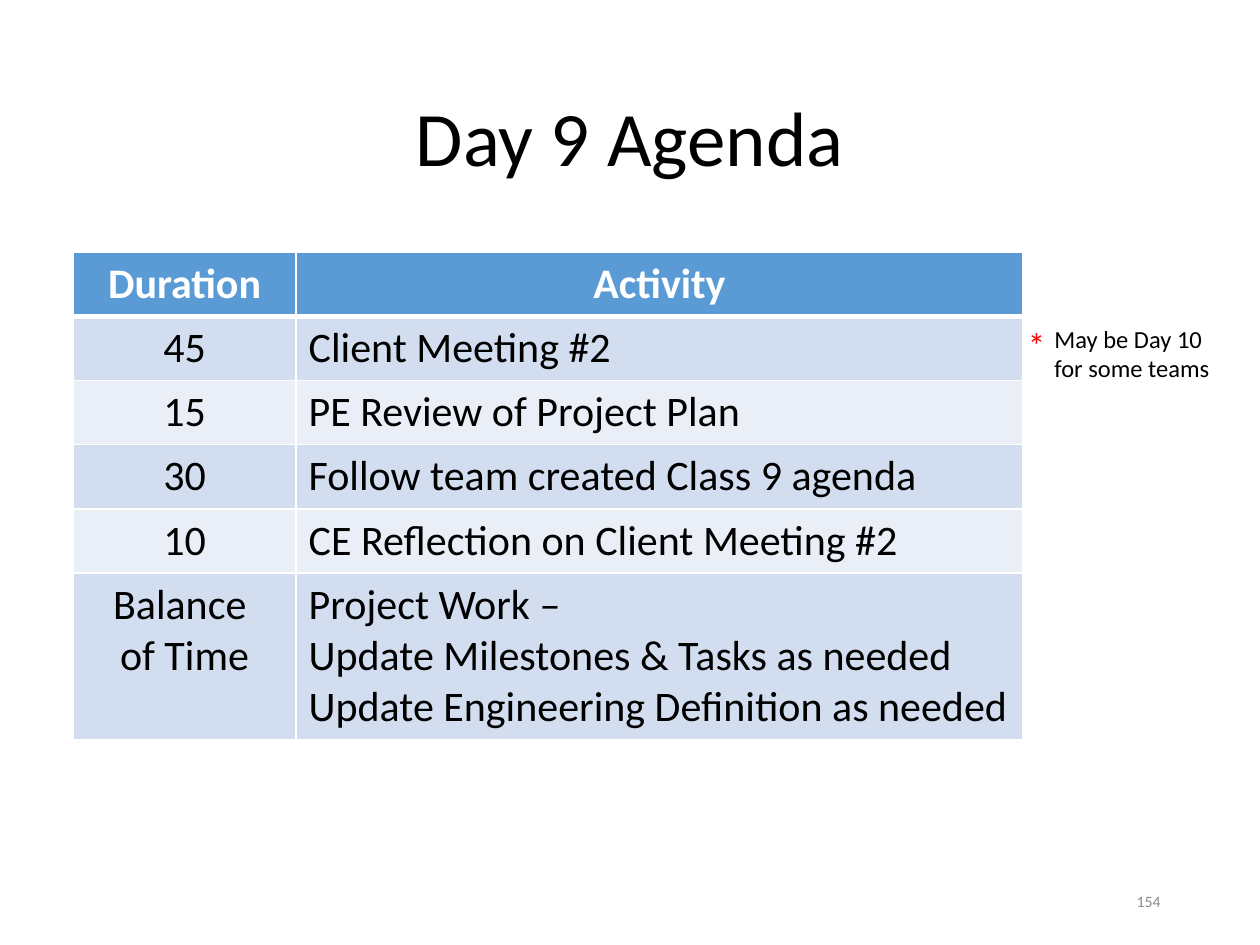
from lxml.etree import SubElement
from pptx import Presentation
from pptx.dml.color import RGBColor
from pptx.enum.text import MSO_ANCHOR, PP_ALIGN
from pptx.oxml.ns import qn
from pptx.util import Inches, Pt

BLACK = RGBColor(0x00, 0x00, 0x00)
WHITE = RGBColor(0xFF, 0xFF, 0xFF)
RED = RGBColor(0xFF, 0x00, 0x00)
GRAY = RGBColor(0x8C, 0x8C, 0x8C)
HEADER_BLUE = RGBColor(0x5B, 0x9B, 0xD5)
BANDS = (RGBColor(0xEA, 0xEF, 0xF7), RGBColor(0xD2, 0xDE, 0xEF))

AGENDA = [
    ("Duration", "Activity"),
    ("45", "Client Meeting #2"),
    ("15", "PE Review of Project Plan"),
    ("30", "Follow team created Class 9 agenda"),
    ("10", "CE Reflection on Client Meeting #2"),
    (
        "Balance \nof Time",
        "Project Work –\n"
        "Update Milestones & Tasks as needed\n"
        "Update Engineering Definition as needed",
    ),
]
COLUMN_WIDTHS = (1.77, 5.77)
ROW_HEIGHTS = (0.51,) * 5 + (1.32,)


class AgendaSlide:
    """Holds the text style and the current slide, and adds elements to it."""

    font_name = "Calibri"

    def __init__(self, slide):
        self.slide = slide

    def format_text(self, frame, size, color, alignment=PP_ALIGN.LEFT, bold=False):
        for paragraph in frame.paragraphs:
            paragraph.alignment = alignment
            font = paragraph.font
            font.name = self.font_name
            font.size = Pt(size)
            font.bold = bold
            font.color.rgb = color

    def add_title(self, text, left, top, width, height):
        title = self.slide.shapes.title
        title.left, title.top = Inches(left), Inches(top)
        title.width, title.height = Inches(width), Inches(height)
        frame = title.text_frame
        frame.text = text
        frame.vertical_anchor = MSO_ANCHOR.MIDDLE
        self.format_text(frame, 44, BLACK, PP_ALIGN.CENTER)
        frame.paragraphs[0].line_spacing = 0.9

    def add_text(self, text, left, top, width, height, size, color,
                 alignment=PP_ALIGN.LEFT, anchor=MSO_ANCHOR.TOP):
        box = self.slide.shapes.add_textbox(
            Inches(left), Inches(top), Inches(width), Inches(height)
        )
        frame = box.text_frame
        frame.word_wrap = True
        frame.vertical_anchor = anchor
        frame.text = text
        self.format_text(frame, size, color, alignment)

    def add_borders(self, cell, widths):
        properties = cell._tc.get_or_add_tcPr()
        for side, width in widths.items():
            line = SubElement(properties, qn(f"a:ln{side}"), w=str(Pt(width)))
            fill = SubElement(line, qn("a:solidFill"))
            SubElement(fill, qn("a:srgbClr"), val=str(WHITE))

    def add_table(self, rows, left, top):
        table = self.slide.shapes.add_table(
            len(rows), len(COLUMN_WIDTHS), Inches(left), Inches(top),
            Inches(sum(COLUMN_WIDTHS)), Inches(sum(ROW_HEIGHTS)),
        ).table
        for column, width in zip(table.columns, COLUMN_WIDTHS):
            column.width = Inches(width)
        for row, height in zip(table.rows, ROW_HEIGHTS):
            row.height = Inches(height)
        for row_index, texts in enumerate(rows):
            is_header = row_index == 0
            for column_index, text in enumerate(texts):
                cell = table.cell(row_index, column_index)
                cell.text = text
                centered = is_header or column_index == 0
                self.format_text(
                    cell.text_frame, 24, WHITE if is_header else BLACK,
                    PP_ALIGN.CENTER if centered else PP_ALIGN.LEFT, is_header,
                )
                top_width = 3 if row_index == 1 else 1
                bottom_width = 3 if is_header else 1
                self.add_borders(
                    cell, {"L": 1, "R": 1, "T": top_width, "B": bottom_width}
                )
                cell.fill.solid()
                cell.fill.fore_color.rgb = (
                    HEADER_BLUE if is_header else BANDS[row_index % 2]
                )


def main():
    presentation = Presentation()
    presentation.slide_width = Inches(10)
    presentation.slide_height = Inches(7.5)
    slide = presentation.slides.add_slide(presentation.slide_layouts[5])
    agenda = AgendaSlide(slide)
    agenda.add_title("Day 9 Agenda", 0.69, 0.4, 8.62, 1.45)
    agenda.add_text("154", 7.06, 6.95, 2.25, 0.4, 9, GRAY,
                    PP_ALIGN.RIGHT, MSO_ANCHOR.MIDDLE)
    agenda.add_table(AGENDA, 0.58, 2)
    agenda.add_text("May be Day 10 for some teams", 8.27, 2.52, 1.5, 0.57, 14, BLACK)
    agenda.add_text("*", 8.06, 2.52, 0.42, 0.44, 20, RED)
    presentation.save("out.pptx")


if __name__ == "__main__":
    main()
